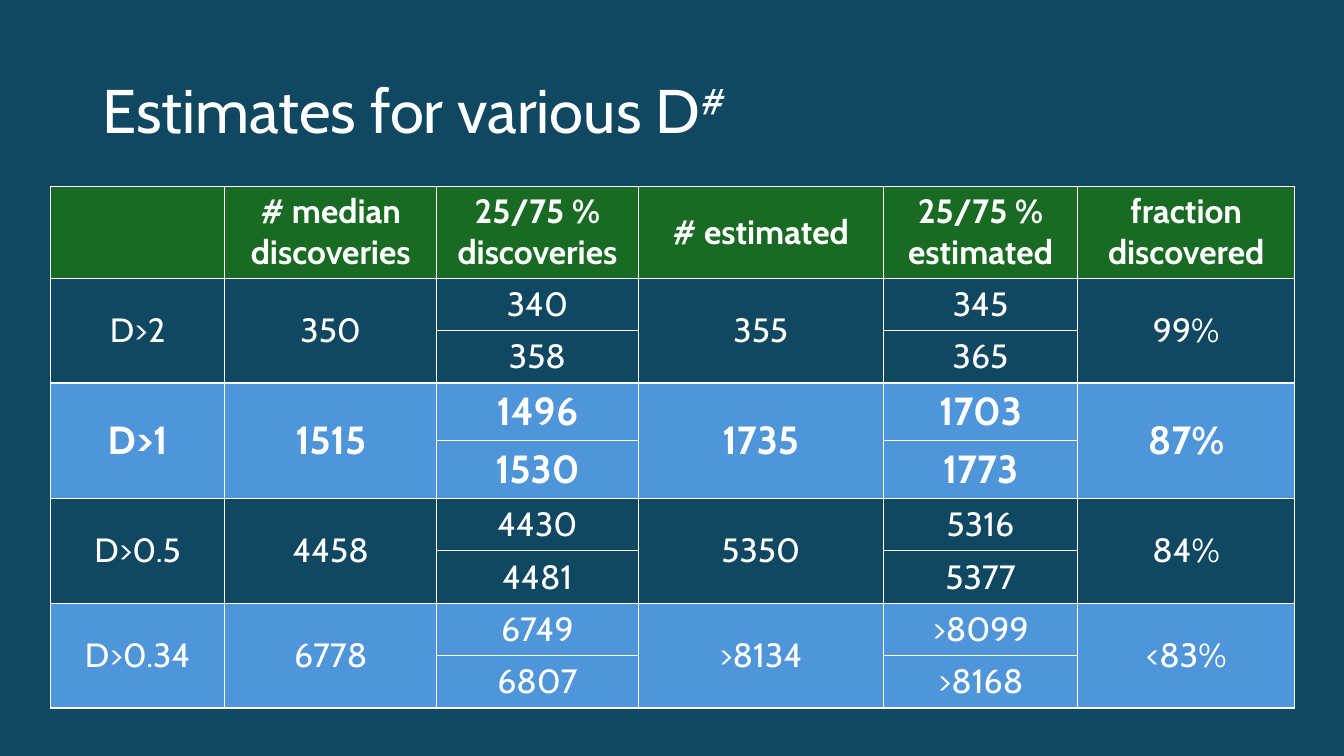
import pptx
import pptx.util
import pptx.oxml
import pptx.dml.color
import pptx.enum.text
from pptx.util import Inches, Pt

NAVY = pptx.dml.color.RGBColor(0x10, 0x48, 0x62)
GREEN = pptx.dml.color.RGBColor(0x19, 0x6B, 0x24)
BLUE = pptx.dml.color.RGBColor(0x4E, 0x95, 0xD9)
WHITE = pptx.dml.color.RGBColor(0xFF, 0xFF, 0xFF)
FONT = "Cabin"
MIDDLE = pptx.enum.text.MSO_ANCHOR.MIDDLE
CENTER = pptx.enum.text.PP_ALIGN.CENTER
BORDER = (
    '<a:{} xmlns:a="http://schemas.openxmlformats.org/drawingml/2006/main" w="12700">'
    '<a:solidFill><a:srgbClr val="FFFFFF"/></a:solidFill></a:{}>'
)

HEADS = ["", "# median discoveries", "25/75 %\ndiscoveries", "# estimated",
         "25/75 %\nestimated", "fraction discovered"]
GROUPS = [
    ["D>2", "350", ("340", "358"), "355", ("345", "365"), "99%"],
    ["D>1", "1515", ("1496", "1530"), "1735", ("1703", "1773"), "87%"],
    ["D>0.5", "4458", ("4430", "4481"), "5350", ("5316", "5377"), "84%"],
    ["D>0.34", "6778", ("6749", "6807"), ">8134", (">8099", ">8168"), "<83%"],
]
WIDTHS = [1.73, 2.1, 2, 2.43, 1.93, 2.15]
HEIGHTS = [0.9, 0.52, 0.52, 0.56, 0.56, 0.52, 0.52, 0.52, 0.52]


def style(font, size, bold=False):
    font.name = FONT
    font.size = Pt(size)
    font.bold = bold
    font.color.rgb = WHITE


def write(cell, text, size, bold):
    cell.text = text
    cell.vertical_anchor = MIDDLE
    for para in cell.text_frame.paragraphs:
        para.alignment = CENTER
        style(para.font, size, bold)


deck = pptx.Presentation()
deck.slide_width = Inches(13.33)
deck.slide_height = Inches(7.5)
slide = deck.slides.add_slide(deck.slide_layouts[6])
slide.background.fill.solid()
slide.background.fill.fore_color.rgb = NAVY

table = slide.shapes.add_table(len(HEIGHTS), len(WIDTHS), Inches(0.5), Inches(1.85),
                               Inches(12.33), Inches(5.13)).table
table.first_row = False
table.horz_banding = False
for col, width in zip(table.columns, WIDTHS):
    col.width = Inches(width)
for row, height in zip(table.rows, HEIGHTS):
    row.height = Inches(height)

for r in range(len(HEIGHTS)):
    for c in range(len(WIDTHS)):
        cell = table.cell(r, c)
        props = cell._tc.get_or_add_tcPr()
        for side in ("lnL", "lnR", "lnT", "lnB"):
            props.append(pptx.oxml.parse_xml(BORDER.format(side, side)))
        if r == 0 or r in (3, 4, 7, 8):
            cell.fill.solid()
            cell.fill.fore_color.rgb = BLUE if r else GREEN
        else:
            cell.fill.background()

for c, head in enumerate(HEADS):
    write(table.cell(0, c), head, 24, True)

for g, group in enumerate(GROUPS):
    top = 1 + 2 * g
    bold = group[0] == "D>1"
    size = 28 if bold else 24
    for c, value in enumerate(group):
        if isinstance(value, tuple):
            for step, part in enumerate(value):
                write(table.cell(top + step, c), part, size, bold)
        else:
            table.cell(top, c).merge(table.cell(top + 1, c))
            write(table.cell(top, c), value, size, bold)

title = slide.shapes.add_textbox(Inches(0.92), Inches(0.4), Inches(11.5), Inches(1.45))
frame = title.text_frame
frame.word_wrap = True
frame.vertical_anchor = MIDDLE
para = frame.paragraphs[0]
para.line_spacing = 0.9
style(para.font, 44)
para.add_run().text = "Estimates for various D"
power = para.add_run()
power.text = "#"
power._r.get_or_add_rPr().set("baseline", "30000")

deck.save("out.pptx")
